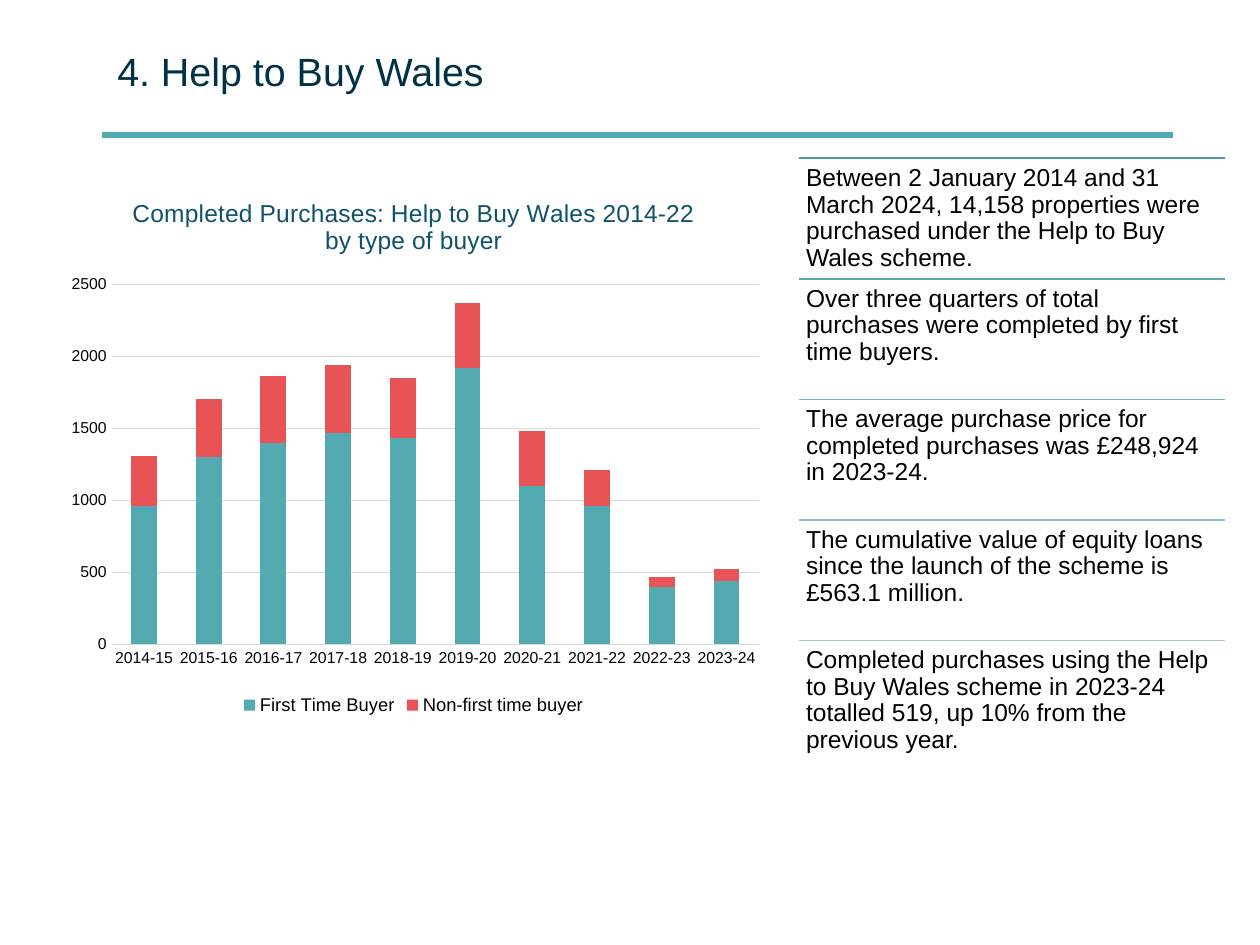
import pptx
import pptx.util
import pptx.chart.data
import pptx.dml.color
import pptx.enum.chart
import pptx.enum.shapes
import pptx.enum.text
import pptx.oxml
import pptx.oxml.ns

Cm, Pt = pptx.util.Cm, pptx.util.Pt

# Content
TITLE = "4. Help to Buy Wales"
HEAD = "Completed Purchases: Help to Buy Wales 2014-22 by type of buyer"
YEARS = ["2014-15", "2015-16", "2016-17", "2017-18", "2018-19",
         "2019-20", "2020-21", "2021-22", "2022-23", "2023-24"]
BUYERS = [
    ("First Time Buyer", "53AAB1",
     [960, 1300, 1400, 1470, 1430, 1920, 1100, 960, 400, 440]),
    ("Non-first time buyer", "E85355",
     [350, 400, 460, 470, 420, 450, 380, 250, 70, 80]),
]
FACTS = [
    ("4B9AA1", "Between 2 January 2014 and 31 March 2024, 14,158 properties "
               "were purchased under the Help to Buy Wales scheme."),
    ("5DA9B0", "Over three quarters of total purchases were completed by "
               "first time buyers."),
    ("75B3B9", "The average purchase price for completed purchases was "
               "£248,924 in 2023-24."),
    ("8CBEC3", "The cumulative value of equity loans since the launch of the "
               "scheme is £563.1 million."),
    ("A3C9CD", "Completed purchases using the Help to Buy Wales scheme in "
               "2023-24 totalled 519, up 10% from the previous year."),
]
GRID = "D9D9D9"
PLOT = {"x": 0.08, "y": 0.2, "w": 0.9, "h": 0.66}  # shares of the chart


def rgb(code):
    return pptx.dml.color.RGBColor.from_string(code)


def put(obj, values):
    for name, value in values.items():
        setattr(obj, name, value)


def style(font, size, code):
    put(font, {"name": "Arial", "size": Pt(size), "bold": False})
    font.color.rgb = rgb(code)


def ink(line, code, width):
    line.color.rgb = rgb(code)
    line.width = Pt(width)


def rule(left, top, width, code, weight):
    line = slide.shapes.add_connector(
        pptx.enum.shapes.MSO_CONNECTOR.STRAIGHT,
        Cm(left), Cm(top), Cm(left + width), Cm(top))
    ink(line.line, code, weight)
    pptx.oxml.ns.qn("a:effectLst")
    line._element.spPr.append(pptx.oxml.parse_xml(
        "<a:effectLst %s/>" % pptx.oxml.ns.nsdecls("a")))


deck = pptx.Presentation()
put(deck, {"slide_width": Cm(25.4), "slide_height": Cm(19.05)})
slide = deck.slides.add_slide(deck.slide_layouts[5])

# Title and its rule
rule(2.06, 2.72, 21.59, "53AAB1", 3.5)
title = slide.shapes.title
put(title, {"left": Cm(2.11), "top": Cm(0.18),
            "width": Cm(21.59), "height": Cm(2.49)})
title.text_frame.text = TITLE
title.text_frame.vertical_anchor = pptx.enum.text.MSO_ANCHOR.MIDDLE
para = title.text_frame.paragraphs[0]
para.alignment = pptx.enum.text.PP_ALIGN.LEFT
style(para.font, 22.5, "003144")

# Facts, each under a rule that grows paler
LEFT, TOP, WIDTH, STEP = 16.1, 3.19, 8.6, 2.43
PAD = Cm(0.15)
for row, (code, text) in enumerate(FACTS):
    top = TOP + row * STEP
    rule(LEFT, top, WIDTH, code, 0.85)
    frame = slide.shapes.add_textbox(
        Cm(LEFT), Cm(top), Cm(WIDTH), Cm(STEP)).text_frame
    put(frame, {"word_wrap": True, "margin_left": PAD, "margin_right": PAD,
                "margin_top": PAD, "margin_bottom": PAD})
    frame.text = text
    para = frame.paragraphs[0]
    para.line_spacing = 0.9
    style(para.font, 14, "000000")

# Stacked columns
data = pptx.chart.data.CategoryChartData()
data.categories = YEARS
for name, code, values in BUYERS:
    data.add_series(name, values)
chart = slide.shapes.add_chart(
    pptx.enum.chart.XL_CHART_TYPE.COLUMN_STACKED,
    Cm(1.09), Cm(3.53), Cm(14.5), Cm(11), data).chart
style(chart.font, 10, "000000")

plot = chart.plots[0]
put(plot, {"gap_width": 150, "overlap": 100, "vary_by_categories": False})
for bars, (name, code, values) in zip(plot.series, BUYERS):
    bars.format.fill.solid()
    bars.format.fill.fore_color.rgb = rgb(code)

chart.has_title = True
chart.chart_title.include_in_layout = False
chart.chart_title.text_frame.text = HEAD
style(chart.chart_title.text_frame.paragraphs[0].runs[0].font, 14, "0F526B")

chart.has_legend = True
put(chart.legend, {"include_in_layout": False,
                   "position": pptx.enum.chart.XL_LEGEND_POSITION.BOTTOM})
style(chart.legend.font, 10.5, "000000")

# Axes
for axis in (chart.category_axis, chart.value_axis):
    put(axis, {"major_tick_mark": pptx.enum.chart.XL_TICK_MARK.NONE,
               "minor_tick_mark": pptx.enum.chart.XL_TICK_MARK.NONE})
    style(axis.tick_labels.font, 9, "000000")
ink(chart.category_axis.format.line, GRID, 0.75)
put(chart.value_axis, {"minimum_scale": 0, "maximum_scale": 2500,
                       "major_unit": 500, "has_major_gridlines": True})
chart.value_axis.format.line.fill.background()
ink(chart.value_axis.major_gridlines.format.line, GRID, 0.75)

# Fixed inner plot area
area = chart._chartSpace.chart.plotArea
for old in area.findall(pptx.oxml.ns.qn("c:layout")):
    area.remove(old)
parts = '<c:layoutTarget val="inner"/>'
parts += "".join('<c:%sMode val="edge"/>' % key for key in "xy")
parts += "".join('<c:%s val="%s"/>' % pair for pair in PLOT.items())
area.insert(0, pptx.oxml.parse_xml(
    "<c:layout %s><c:manualLayout>%s</c:manualLayout></c:layout>"
    % (pptx.oxml.ns.nsdecls("c"), parts)))

deck.save("out.pptx")
